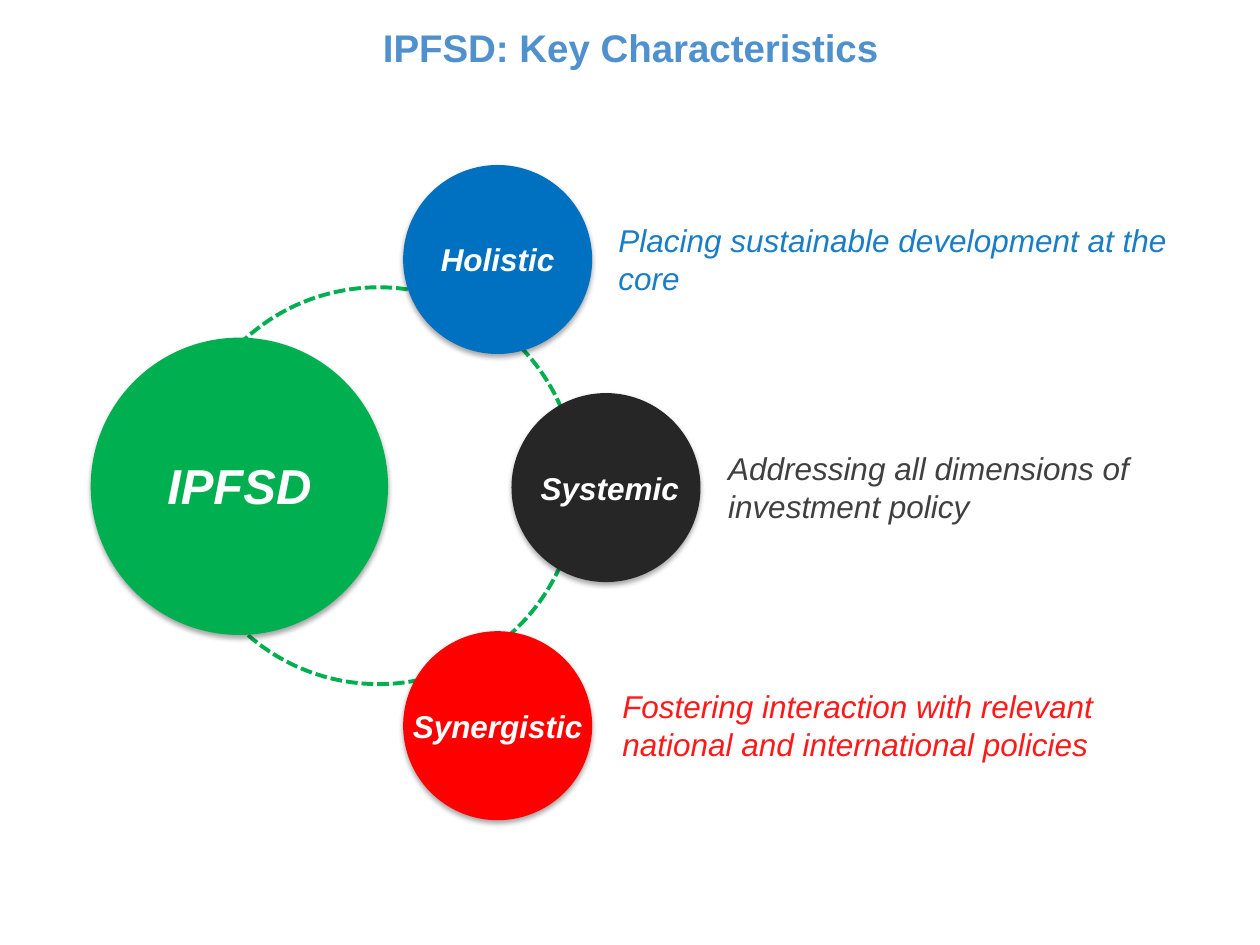
from pptx import Presentation
from pptx.dml.color import RGBColor
from pptx.enum.dml import MSO_LINE
from pptx.enum.shapes import MSO_SHAPE as Shape
from pptx.enum.text import MSO_ANCHOR as Anchor, MSO_AUTO_SIZE as AutoSize, PP_ALIGN as Align
from pptx.oxml import parse_xml
from pptx.oxml.ns import nsdecls, qn
from pptx.util import Inches, Pt

COLORS = {
    "green": "00B050", "blue": "0070C0", "black": "262626", "gray": "404040",
    "red": "FF0000", "white": "FFFFFF", "title": "4F91CD",
}
COLUMNS, ROWS = 100, 75
HUB_SIZE, NODE_SIZE = 23.6, 15
LABEL_WIDTH, LABEL_HEIGHT = 22, 4
NOTE_HEIGHT = 7.1
SHADOW = (
    f'<a:outerShdw {nsdecls("a")} blurRad="{Pt(3.1)}" dist="{Pt(1.8)}" dir="5400000" '
    'rotWithShape="0"><a:srgbClr val="000000"><a:alpha val="35000"/></a:srgbClr></a:outerShdw>'
)
NODES = [
    ("Holistic", "blue", (39.5, 20.6), 0,
     "Placing sustainable development at the core", "blue", 90, 48.1, 46.5),
    ("Systemic", "black", (48.1, 38.7), 0.3,
     "Addressing all dimensions of investment policy", "gray", 100, 56.8, 37),
    ("Synergistic", "red", (39.5, 57.6), 0,
     "Fostering interaction with relevant national and international policies",
     "red", 90, 48.4, 46.5),
]


def write_text(frame, text, size=18, color="white", bold=False, italic=True,
               align=Align.LEFT, anchor=Anchor.TOP, opacity=100):
    frame.word_wrap = True
    frame.auto_size = AutoSize.NONE
    frame.vertical_anchor = anchor
    para = frame.paragraphs[0]
    para.alignment = align
    span = para.add_run()
    span.text = text
    font = span.font
    font.name, font.size, font.bold, font.italic = "Arial", Pt(size), bold, italic
    font.color.rgb = RGBColor.from_string(COLORS[color])
    if opacity < 100:
        tint = span._r.rPr.find(".//" + qn("a:srgbClr"))
        tint.append(parse_xml(f'<a:alpha {nsdecls("a")} val="{opacity * 1000}"/>'))


class Diagram:
    def __init__(self, deck):
        self.page = deck.slides.add_slide(deck.slide_layouts[5])
        self.column = deck.slide_width / COLUMNS
        self.row = deck.slide_height / ROWS

    def area(self, left, top, width, height):
        return (round(left * self.column), round(top * self.row),
                round(width * self.column), round(height * self.row))

    def title(self, text, *place):
        box = self.page.shapes.title
        box.left, box.top, box.width, box.height = self.area(*place)
        write_text(box.text_frame, text, size=22, color="title", bold=True, italic=False,
                   align=Align.CENTER, anchor=Anchor.MIDDLE)

    def circle(self, center, size):
        x, y = center
        place = self.area(x - size / 2, y - size / 2, size, size)
        shape = self.page.shapes.add_shape(Shape.OVAL, *place)
        shape.shadow.inherit = False
        return shape

    def ring(self, center, size, color):
        ring = self.circle(center, size)
        ring.fill.background()
        ring.line.color.rgb = RGBColor.from_string(COLORS[color])
        ring.line.width = Pt(2.25)
        ring.line.dash_style = MSO_LINE.SQUARE_DOT

    def disc(self, center, size, color):
        disc = self.circle(center, size)
        disc.fill.solid()
        disc.fill.fore_color.rgb = RGBColor.from_string(COLORS[color])
        disc.line.fill.background()
        disc._element.spPr.find(qn("a:effectLst")).append(parse_xml(SHADOW))

    def text(self, text, left, middle, width, height, **style):
        place = self.area(left, middle - height / 2, width, height)
        box = self.page.shapes.add_textbox(*place)
        write_text(box.text_frame, text, **style)

    def label(self, text, center, width=LABEL_WIDTH, height=LABEL_HEIGHT, size=18):
        x, y = center
        self.text(text, x - width / 2, y, width, height, size=size, bold=True,
                  align=Align.CENTER)


def main():
    deck = Presentation()
    deck.slide_width, deck.slide_height = Inches(10), Inches(7.5)
    diagram = Diagram(deck)
    diagram.title("IPFSD: Key Characteristics", 0.1, 1, 99.9, 5.5)
    diagram.ring((30.05, 38.55), 31.5, "green")
    diagram.disc((19, 38.6), HUB_SIZE, "green")
    diagram.label("IPFSD", (19, 38.55), 22.1, 5.7, size=28)
    for name, fill, center, shift, note, color, opacity, left, width in NODES:
        x, y = center
        diagram.disc(center, NODE_SIZE, fill)
        diagram.label(name, (x + shift, y))
        diagram.text(note, left, y, width, NOTE_HEIGHT, color=color, opacity=opacity)
    deck.save("out.pptx")


if __name__ == "__main__":
    main()
